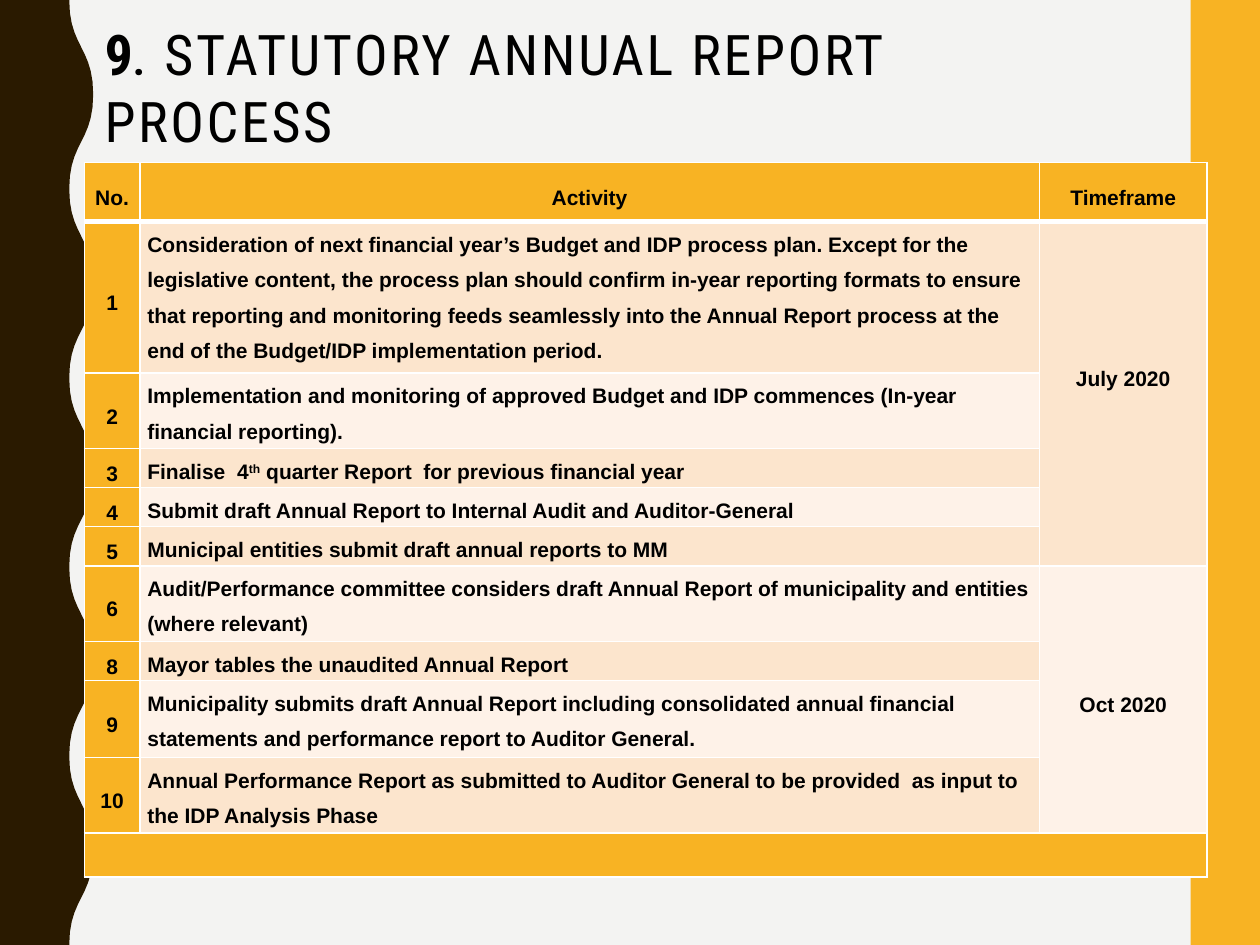
"""Build the statutory annual report process slide."""
from lxml import etree
from pptx import Presentation
from pptx.dml.color import RGBColor
from pptx.enum.shapes import MSO_SHAPE
from pptx.enum.text import MSO_ANCHOR as Anchor, PP_ALIGN as Align
from pptx.oxml.ns import qn
from pptx.util import Inches, Pt

AMBER, BROWN, PAPER = "F8B323", "2A1A00", "F3F3F2"
PEACH, CREAM, WHITE, BLACK = "FCE5CD", "FEF2E8", "FFFFFF", "000000"

TITLE = [
    ("9", dict(size=32, bold=True)),
    (".  ", dict(size=24, bold=True)),
    ("STATUTORY ANNUAL REPORT PROCESS", dict(size=32, spacing=1.5)),
]
HEADERS = ["No.", "Activity", "Timeframe"]
ACTIVITIES = [
    ("1", 1.13, ["Consideration of next financial year’s Budget and IDP process plan. "
                 "Except for the legislative content, the process plan should confirm in-year "
                 "reporting formats to ensure that reporting and monitoring feeds seamlessly "
                 "into the Annual Report process at the end of the Budget/IDP implementation "
                 "period."]),
    ("2", 0.55, ["Implementation and monitoring of approved Budget and IDP commences "
                 "(In-year financial reporting)."]),
    ("3", 0.31, ["Finalise  4", "th", " quarter Report  for previous financial year"]),
    ("4", 0.31, ["Submit draft Annual Report to Internal Audit and Auditor-General"]),
    ("5", 0.31, ["Municipal entities submit draft annual reports to MM"]),
    ("6", 0.55, ["Audit/Performance committee considers draft Annual Report of municipality "
                 "and entities (where relevant)"]),
    ("8", 0.31, ["Mayor tables the unaudited Annual Report"]),
    ("9", 0.61, ["Municipality submits draft Annual Report including consolidated annual "
                 "financial statements and performance report to Auditor General."]),
    ("10", 0.55, ["Annual Performance Report as submitted to Auditor General to be provided  "
                  "as input to the IDP Analysis Phase"]),
]
TIMEFRAMES = [("July 2020", 1, 5, PEACH, 0.33), ("Oct 2020", 6, 9, CREAM, 0)]
COLUMN_WIDTHS = [0.44, 7.14, 1.33]
HEADER_HEIGHT, FOOTER_HEIGHT = 0.47, 0.35


def paint(fill, color):
    fill.solid()
    fill.fore_color.rgb = RGBColor.from_string(color)


def add_text(paragraph, text, font="Arial", size=12, bold=False, spacing=0, baseline=0):
    run = paragraph.add_run()
    run.text = text
    run.font.name, run.font.size, run.font.bold = font, Pt(size), bold
    run.font.color.rgb = RGBColor.from_string(BLACK)
    properties = run.font._element
    if spacing:
        properties.set("spc", str(int(spacing * 100)))
    if baseline:
        properties.set("baseline", str(baseline * 1000))


def finish_shape(shape, color):
    paint(shape.fill, color)
    shape.line.fill.background()
    shape.shadow.inherit = False


def add_wave(slide, low=0.55, high=0.74, half_wave=0.75, count=10, steps=10):
    points = [(low, 0)]
    for index in range(count):
        start, end = (low, high) if index % 2 == 0 else (high, low)
        for step in range(1, steps + 1):
            t = step / steps
            x = start + (end - start) * (3 * t**2 - 2 * t**3)
            y = half_wave * (index + 1.5 * t * (1 - t) + t**3)
            points.append((x, y))
    points.append((0, half_wave * count))
    builder = slide.shapes.build_freeform(0, 0)
    builder.add_line_segments([(Inches(x), Inches(y)) for x, y in points], close=True)
    finish_shape(builder.convert_to_shape(), BROWN)


def format_cell(cell, row, color):
    cell.margin_left = cell.margin_right = Inches(0.06)
    cell.margin_top = cell.margin_bottom = 0
    cell.vertical_anchor = Anchor.MIDDLE
    properties = cell._tc.get_or_add_tcPr()
    for side in "LRTB":
        thick = (row, side) in [(0, "B"), (1, "T")]
        line = etree.SubElement(properties, qn(f"a:ln{side}"), w=str(Pt(3 if thick else 1)))
        solid = etree.SubElement(line, qn("a:solidFill"))
        etree.SubElement(solid, qn("a:srgbClr"), val=WHITE)
    paint(cell.fill, color)


def write_cell(cell, parts, align=Align.CENTER):
    paragraph = cell.text_frame.paragraphs[0]
    paragraph.alignment = align
    paragraph.line_spacing = 1.5
    if align == Align.CENTER:
        paragraph.space_after = Pt(3)
    for text in parts:
        add_text(paragraph, text, bold=True, baseline=30 if text == "th" else 0)


def add_title(slide):
    box = slide.shapes.add_textbox(Inches(0.83), Inches(0.25), Inches(7.67), Inches(1.05))
    frame = box.text_frame
    frame.word_wrap = True
    frame.vertical_anchor = Anchor.MIDDLE
    frame.margin_left = frame.margin_right = frame.margin_top = 0
    frame.margin_bottom = Inches(0.17)
    for text, style in TITLE:
        add_text(frame.paragraphs[0], text, font="Roboto Condensed", **style)


def add_schedule(slide):
    heights = [HEADER_HEIGHT, *(height for _, height, _ in ACTIVITIES), FOOTER_HEIGHT]
    last = len(heights) - 1
    table = slide.shapes.add_table(
        len(heights), len(COLUMN_WIDTHS), Inches(0.67), Inches(1.29),
        Inches(sum(COLUMN_WIDTHS)), Inches(sum(heights))).table
    for column, width in zip(table.columns, COLUMN_WIDTHS):
        column.width = Inches(width)
    for index, height in enumerate(heights):
        table.rows[index].height = Inches(height)
        band = PEACH if index % 2 else CREAM
        for column in range(len(COLUMN_WIDTHS)):
            plain = index in (0, last) or column == 0
            format_cell(table.cell(index, column), index, AMBER if plain else band)
    for column, header in enumerate(HEADERS):
        write_cell(table.cell(0, column), [header])
    for index, (number, _, parts) in enumerate(ACTIVITIES, 1):
        write_cell(table.cell(index, 0), [number])
        activity = table.cell(index, 1)
        activity.vertical_anchor = Anchor.TOP
        write_cell(activity, parts, Align.LEFT)
    for label, first, final, color, bottom in TIMEFRAMES:
        cell = table.cell(first, 2)
        cell.merge(table.cell(final, 2))
        paint(cell.fill, color)
        cell.margin_bottom = Inches(bottom)
        write_cell(cell, [label])
    table.cell(last, 0).merge(table.cell(last, 2))


def main():
    presentation = Presentation()
    presentation.slide_width, presentation.slide_height = Inches(10), Inches(7.5)
    slide = presentation.slides.add_slide(presentation.slide_layouts[6])
    paint(slide.background.fill, PAPER)
    side_bar = slide.shapes.add_shape(
        MSO_SHAPE.RECTANGLE, Inches(9.45), 0, Inches(0.55), Inches(7.5))
    finish_shape(side_bar, AMBER)
    add_wave(slide)
    add_title(slide)
    add_schedule(slide)
    presentation.save("out.pptx")


if __name__ == "__main__":
    main()
